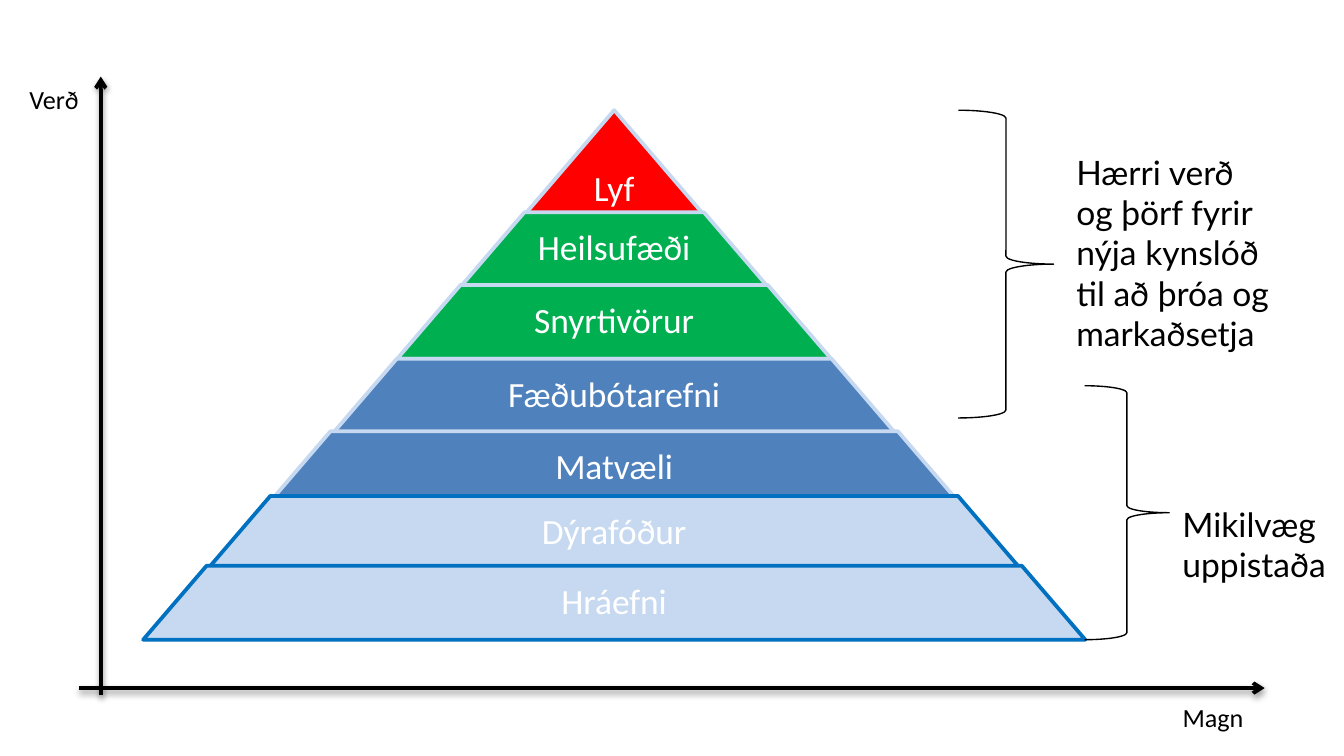
from lxml import etree
from pptx import Presentation
from pptx.dml.color import RGBColor
from pptx.enum.shapes import MSO_CONNECTOR, MSO_SHAPE
from pptx.enum.text import MSO_ANCHOR, PP_ALIGN
from pptx.oxml import parse_xml
from pptx.oxml.ns import nsdecls, qn
from pptx.util import Inches, Pt

BLACK = RGBColor(0x00, 0x00, 0x00)
WHITE = RGBColor(0xFF, 0xFF, 0xFF)
RED = RGBColor(0xFF, 0x00, 0x00)
GREEN = RGBColor(0x00, 0xB0, 0x50)
BLUE = RGBColor(0x4F, 0x81, 0xBD)
PALE_BLUE = RGBColor(0xC6, 0xD9, 0xF1)
DARK_BLUE = RGBColor(0x00, 0x70, 0xC0)

# Widescreen, 16:9
presentation = Presentation()
presentation.slide_width = Inches(10)
presentation.slide_height = Inches(10) * 9 // 16
slide = presentation.slides.add_slide(presentation.slide_layouts[6])

# Pyramid, from the tip down: text, top, width, height, fill, outline
PYRAMID_CENTER = 4.57
SLOPE = 0.858
MARGIN = 0.03
levels = [
    ("Lyf", 0.82, 1.32, 0.77, RED, PALE_BLUE),
    ("Heilsufæði", 1.58, 2.28, 0.55, GREEN, PALE_BLUE),
    ("Snyrtivörur", 2.12, 3.23, 0.55, GREEN, PALE_BLUE),
    ("Fæðubótarefni", 2.67, 4.18, 0.55, BLUE, PALE_BLUE),
    ("Matvæli", 3.21, 5.15, 0.54, BLUE, PALE_BLUE),
    ("Dýrafóður", 3.69, 6.06, 0.55, PALE_BLUE, DARK_BLUE),
    ("Hráefni", 4.21, 7.01, 0.55, PALE_BLUE, DARK_BLUE),
]
for text, top, width, height, fill, outline in levels:
    level = slide.shapes.add_shape(
        MSO_SHAPE.TRAPEZOID, Inches(PYRAMID_CENTER - width / 2), Inches(top),
        Inches(width), Inches(height))
    level.adjustments[0] = SLOPE
    level.shadow.inherit = False
    level.fill.solid()
    level.fill.fore_color.rgb = fill
    level.line.color.rgb = outline
    level.line.width = Pt(2)

    frame = level.text_frame
    frame.word_wrap = True
    frame.margin_left = frame.margin_right = frame.margin_top = Inches(MARGIN)
    if text == "Lyf":
        frame.vertical_anchor = MSO_ANCHOR.BOTTOM
        frame.margin_bottom = Inches(MARGIN)
    else:
        # A trapezoid's text area starts below its top edge; balance it at the bottom
        text_offset = height / 3 * (SLOPE * height) / (width / 2)
        frame.vertical_anchor = MSO_ANCHOR.MIDDLE
        frame.margin_bottom = Inches(MARGIN + text_offset)
    paragraph = frame.paragraphs[0]
    paragraph.text = text
    paragraph.alignment = PP_ALIGN.CENTER
    paragraph.line_spacing = 0.9
    paragraph.font.name = "Calibri"
    paragraph.font.size = Pt(19)
    paragraph.font.color.rgb = WHITE

# Price and quantity axes
for start_x, start_y, end_x, end_y in [(0.75, 5.17, 0.75, 0.57), (0.59, 5.12, 9.41, 5.12)]:
    axis = slide.shapes.add_connector(
        MSO_CONNECTOR.STRAIGHT, Inches(start_x), Inches(start_y), Inches(end_x), Inches(end_y))
    axis.line.color.rgb = BLACK
    axis.line.width = Pt(2)
    etree.SubElement(axis.line._get_or_add_ln(), qn("a:tailEnd"), type="arrow")
    axis._element.spPr.append(parse_xml(
        f'<a:effectLst {nsdecls("a")}>'
        '<a:outerShdw blurRad="40000" dist="20000" dir="5400000" rotWithShape="0">'
        '<a:srgbClr val="000000"><a:alpha val="38000"/></a:srgbClr>'
        '</a:outerShdw></a:effectLst>'))

for left, top, width, height in [(7.13, 0.82, 0.71, 2.29), (8.07, 2.87, 0.63, 1.89)]:
    brace = slide.shapes.add_shape(
        MSO_SHAPE.RIGHT_BRACE, Inches(left), Inches(top), Inches(width), Inches(height))
    brace.shadow.inherit = False
    brace.fill.background()
    brace.line.color.rgb = BLACK
    brace.line.width = Pt(0.75)

# Axis names and brace notes
labels = [
    ("Verð", 0.12, 0.57, 0.63, 0.34, "Calibri", 14),
    ("Magn", 8.7, 5.17, 0.79, 0.34, "Calibri", 14),
    ("Hærri verð og þörf fyrir nýja kynslóð til að þróa og markaðsetja",
     7.91, 1.08, 1.65, 1.62, "Lato", 18),
    ("Mikilvæg uppistaða", 8.7, 3.7, 1.3, 0.71, "Lato", 18),
]
for text, left, top, width, height, font_name, size in labels:
    label = slide.shapes.add_textbox(Inches(left), Inches(top), Inches(width), Inches(height))
    label.text_frame.word_wrap = True
    paragraph = label.text_frame.paragraphs[0]
    paragraph.text = text
    paragraph.font.name = font_name
    paragraph.font.size = Pt(size)
    paragraph.font.color.rgb = BLACK

presentation.save("out.pptx")
